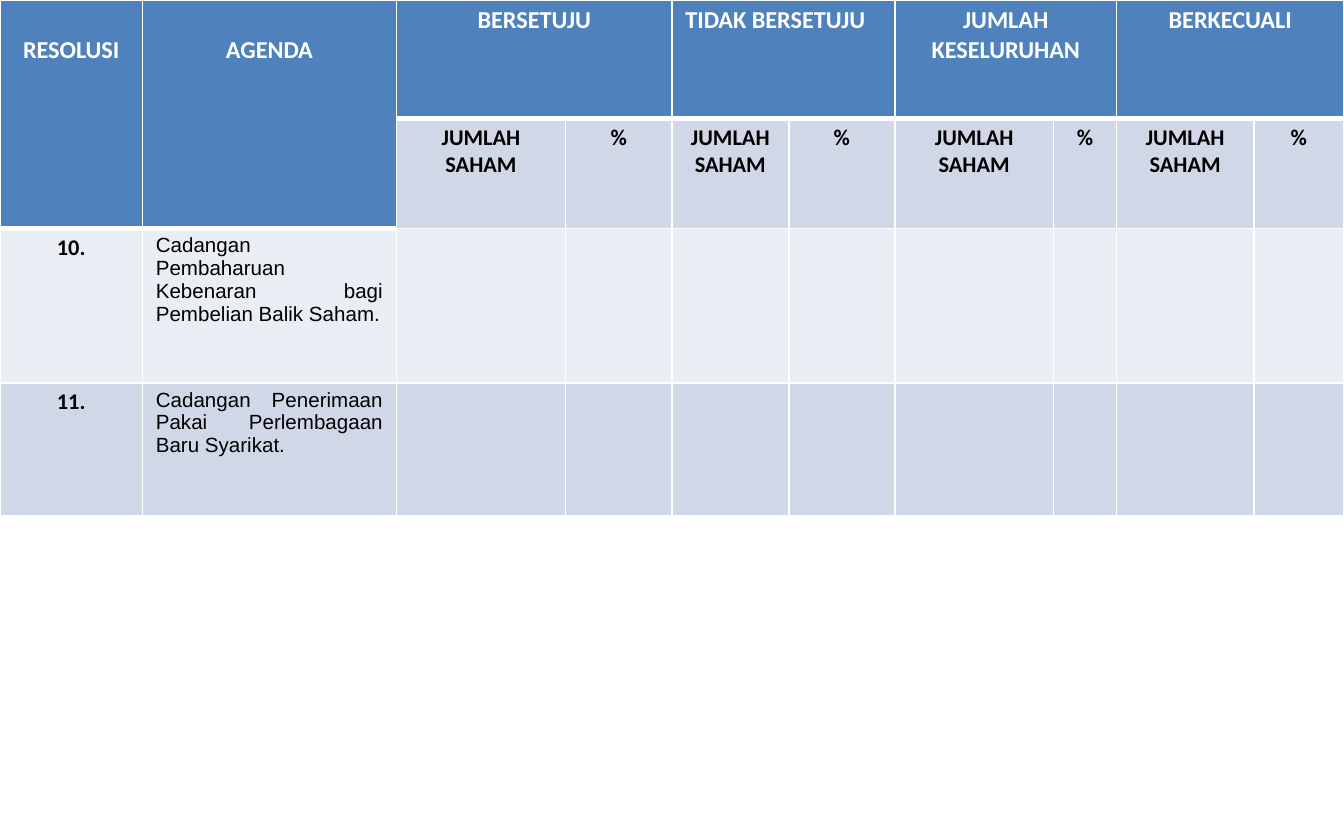
"""Build the voting-result table slide for resolutions 10 and 11."""
from lxml.etree import SubElement
from pptx import Presentation
from pptx.dml.color import RGBColor
from pptx.enum.text import PP_ALIGN
from pptx.oxml.ns import qn
from pptx.util import Pt

WHITE = RGBColor(0xFF, 0xFF, 0xFF)
BLACK = RGBColor(0x00, 0x00, 0x00)
BLUE = RGBColor(0x4F, 0x81, 0xBD)
BAND_DARK = RGBColor(0xD0, 0xD8, 0xE8)
BAND_LIGHT = RGBColor(0xE9, 0xED, 0xF4)

COLUMN_WIDTHS = [76.3, 136.1, 90.7, 56.9, 62.6, 56.9, 85, 33.8, 73.5, 48.2]
ROW_HEIGHTS = [63.4, 59, 82.8, 71.3]
ROW_HEADINGS = ["RESOLUSI", "AGENDA"]
VOTES = [
    ("BERSETUJU", PP_ALIGN.CENTER),
    ("TIDAK BERSETUJU", PP_ALIGN.LEFT),
    ("JUMLAH KESELURUHAN", PP_ALIGN.CENTER),
    ("BERKECUALI", PP_ALIGN.CENTER),
]
MEASURES = ["JUMLAH SAHAM", "%"]
RESOLUTIONS = [
    ("10.", "Cadangan Pembaharuan Kebenaran bagi Pembelian Balik Saham.", BAND_LIGHT),
    ("11.", "Cadangan Penerimaan Pakai Perlembagaan Baru Syarikat.", BAND_DARK),
]


class VoteSlide:
    """Hold the table style and the current slide."""

    heading_font = "Calibri"
    body_font = "Arial"
    thin, thick = 1, 3

    def __init__(self, deck):
        self.slide = deck.slides.add_slide(deck.slide_layouts[6])

    def table(self, widths, heights):
        frame = self.slide.shapes.add_table(
            len(heights), len(widths), Pt(0), Pt(0), Pt(sum(widths)), Pt(sum(heights)))
        for column, width in zip(frame.table.columns, widths):
            column.width = Pt(width)
        for row, height in zip(frame.table.rows, heights):
            row.height = Pt(height)
        return frame.table

    def cell(self, cell, fill, top=thin, bottom=thin):
        cell.fill.solid()
        cell.fill.fore_color.rgb = fill
        cell.margin_left = cell.margin_right = Pt(7.2)
        cell.margin_top = cell.margin_bottom = Pt(3)
        properties = cell._tc.get_or_add_tcPr()
        sides = [("L", self.thin), ("R", self.thin), ("T", top), ("B", bottom)]
        for position, (side, width) in enumerate(sides):
            line = SubElement(properties, qn(f"a:ln{side}"), w=str(Pt(width)))
            SubElement(SubElement(line, qn("a:solidFill")), qn("a:srgbClr"), val=str(WHITE))
            properties.insert(position, line)

    def text(self, cell, words, size, color=BLACK, align=PP_ALIGN.CENTER,
             font=heading_font, bold=True):
        paragraph = cell.text_frame.paragraphs[0]
        paragraph.alignment = align
        run = paragraph.add_run()
        run.text = words
        run.font.name = font
        run.font.size = Pt(size)
        run.font.bold = bold
        run.font.color.rgb = color

    def headings(self, table):
        for column, heading in enumerate(ROW_HEADINGS):
            for row in range(2):
                self.cell(table.cell(row, column), BLUE, bottom=self.thick)
            heading_cell = table.cell(0, column)
            heading_cell.merge(table.cell(1, column))
            heading_cell.margin_top = Pt(19)
            self.text(heading_cell, heading, 13, WHITE)
        for index, (vote, align) in enumerate(VOTES):
            first = len(ROW_HEADINGS) + index * len(MEASURES)
            for column, measure in enumerate(MEASURES, first):
                self.cell(table.cell(0, column), BLUE, bottom=self.thick)
                self.cell(table.cell(1, column), BAND_DARK, top=self.thick)
                self.text(table.cell(1, column), measure, 12)
            table.cell(0, first).merge(table.cell(0, first + len(MEASURES) - 1))
            self.text(table.cell(0, first), vote, 13, WHITE, align)

    def resolutions(self, table):
        for row, (number, agenda, band) in enumerate(RESOLUTIONS, 2):
            for column in range(len(COLUMN_WIDTHS)):
                below_heading = row == 2 and column < len(ROW_HEADINGS)
                self.cell(table.cell(row, column), band,
                          top=self.thick if below_heading else self.thin)
            self.text(table.cell(row, 0), number, 12)
            self.text(table.cell(row, 1), agenda, 11, align=PP_ALIGN.JUSTIFY,
                      font=self.body_font, bold=False)


def main():
    deck = Presentation()
    deck.slide_width, deck.slide_height = Pt(720), Pt(450)
    vote_slide = VoteSlide(deck)
    votes = vote_slide.table(COLUMN_WIDTHS, ROW_HEIGHTS)
    vote_slide.headings(votes)
    vote_slide.resolutions(votes)
    deck.save("out.pptx")


if __name__ == "__main__":
    main()
